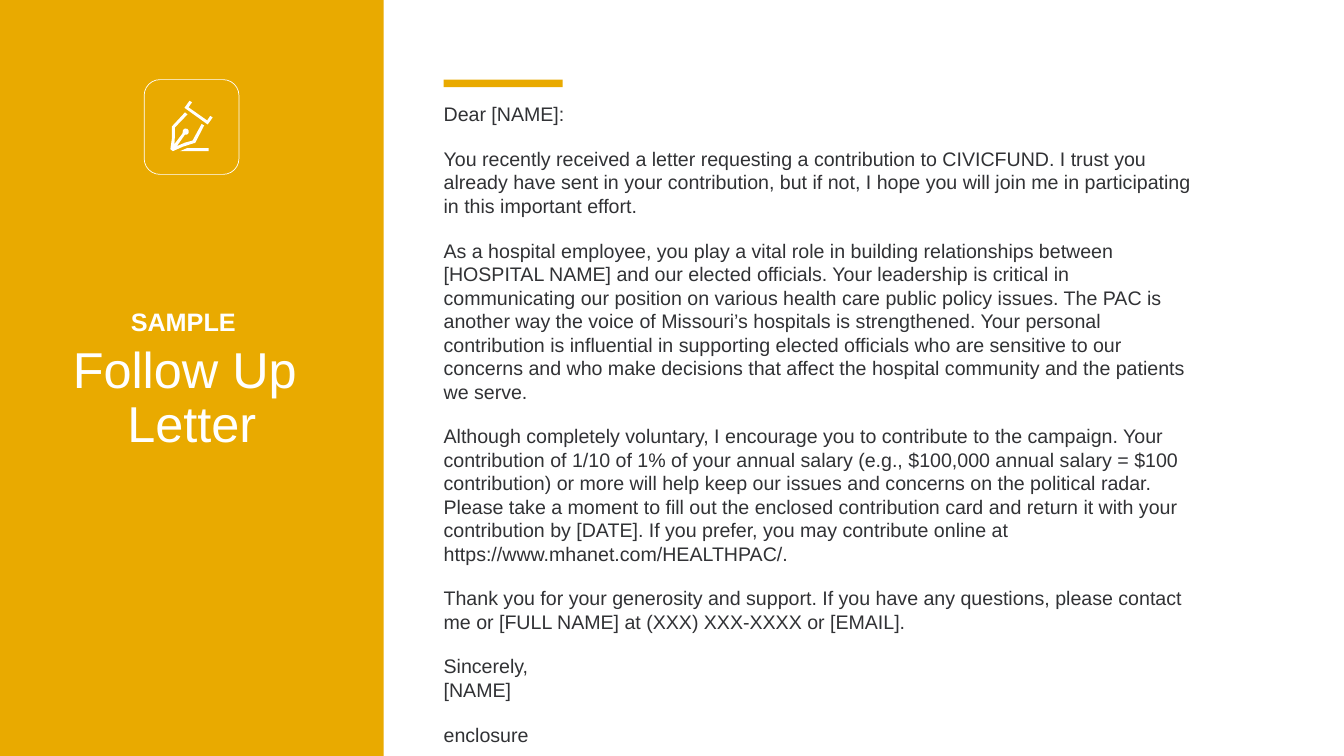
from typing import NamedTuple

from pptx import Presentation
from pptx import util as u
from pptx.dml.color import RGBColor
from pptx.enum import shapes, text

PX = 9144
FONT = "Arial"
GOLD = RGBColor(0xE9, 0xAA, 0x00)
WHITE = RGBColor(0xFF, 0xFF, 0xFF)
INK = RGBColor(0x31, 0x32, 0x35)


class Box(NamedTuple):
    x: int
    y: int
    w: int
    h: int


class Piece(NamedTuple):
    text: str
    size: int
    bold: bool
    breaks: bool


PANEL = Box(0, 0, 761, 1500)
ACCENT = Box(880, 158, 236, 15)
BADGE = Box(286, 158, 188, 188)
TITLE = Box(0, 547, 761, 407)
LETTER = Box(880, 203, 1482, 1187)

TITLE_PIECES = [
    Piece("SAMPLE", 36, True, False),
    Piece(" ", 88, True, True),
    Piece("Follow Up ", 72, False, True),
    Piece("Letter", 72, False, False),
]

PEN_ICON = [
    [(414, 294), (371, 294), (357, 300), (414, 300)],
    [(411, 239), (374, 213), (381, 203), (376, 200), (366, 214),
     (412, 247), (422, 233), (417, 230)],
    [(400, 246), (382, 279), (367, 283), (351, 290), (367, 267),
     (371, 267), (374, 264), (374, 259), (372, 256), (367, 255),
     (363, 258), (362, 265), (346, 286), (347, 270), (347, 253),
     (372, 227), (367, 223), (341, 251), (341, 275), (338, 296),
     (343, 300), (363, 291), (385, 284), (387, 284), (405, 249)],
]

LETTER_PARAGRAPHS = [
    "Dear [NAME]:",
    "You recently received a letter requesting a contribution to CIVICFUND. "
    "I trust you already have sent in your contribution, but if not, I hope "
    "you will join me in participating in this important effort.",
    "As a hospital employee, you play a vital role in building relationships "
    "between [HOSPITAL NAME] and our elected officials. Your leadership is "
    "critical in communicating our position on various health care public "
    "policy issues. The PAC is another way the voice of Missouri’s hospitals "
    "is strengthened. Your personal contribution is influential in supporting "
    "elected officials who are sensitive to our concerns and who make "
    "decisions that affect the hospital community and the patients we serve.",
    "Although completely voluntary, I encourage you to contribute to the "
    "campaign. Your contribution of 1/10 of 1% of your annual salary (e.g., "
    "$100,000 annual salary = $100 contribution) or more will help keep our "
    "issues and concerns on the political radar. Please take a moment to fill "
    "out the enclosed contribution card and return it with your contribution "
    "by [DATE]. If you prefer, you may contribute online at "
    "https://www.mhanet.com/HEALTHPAC/.",
    "Thank you for your generosity and support. If you have any questions, "
    "please contact me or [FULL NAME] at (XXX) XXX-XXXX or [EMAIL].",
    "Sincerely,\v[NAME]",
    "enclosure",
]


def emu(box: Box) -> list[int]:
    return [v * PX for v in box]


def paint(sp, fill: RGBColor, line: RGBColor | None = None) -> None:
    sp.shadow.inherit = False
    sp.fill.solid()
    sp.fill.fore_color.rgb = fill
    if line is None:
        sp.line.fill.background()
    else:
        sp.line.color.rgb = line
        sp.line.width = u.Pt(1)


def style(r, size: int, color: RGBColor, bold: bool = False) -> None:
    r.font.name = FONT
    r.font.size = u.Pt(size)
    r.font.bold = bold
    r.font.color.rgb = color


def add_rect(s, box: Box) -> None:
    paint(s.shapes.add_shape(shapes.MSO_SHAPE.RECTANGLE, *emu(box)), GOLD)


def add_badge(s) -> None:
    g = s.shapes.add_group_shape()
    sp = g.shapes.add_shape(shapes.MSO_SHAPE.ROUNDED_RECTANGLE, *emu(BADGE))
    paint(sp, GOLD, WHITE)
    for points in PEN_ICON:
        fb = g.shapes.build_freeform(*points[0], scale=PX)
        fb.add_line_segments(points[1:], close=True)
        paint(fb.convert_to_shape(), WHITE)


def add_title(s) -> None:
    tf = s.shapes.add_textbox(*emu(TITLE)).text_frame
    tf.word_wrap = True
    p = tf.paragraphs[0]
    p.alignment = text.PP_ALIGN.CENTER
    p.line_spacing = 0.9
    for piece in TITLE_PIECES:
        r = p.add_run()
        r.text = piece.text
        style(r, piece.size, WHITE, piece.bold)
        if piece.breaks:
            p.add_line_break()


def add_letter(s) -> None:
    tf = s.shapes.add_textbox(*emu(LETTER)).text_frame
    tf.word_wrap = True
    tf.margin_left = tf.margin_top = tf.margin_right = tf.margin_bottom = 0
    for i, words in enumerate(LETTER_PARAGRAPHS):
        p = tf.add_paragraph() if i else tf.paragraphs[0]
        p.text = words
        p.space_after = u.Pt(30)
        for r in p.runs:
            style(r, 28, INK)


def main() -> None:
    prs = Presentation()
    prs.slide_width, prs.slide_height = 2666 * PX, 1500 * PX
    s = prs.slides.add_slide(prs.slide_layouts[6])
    add_rect(s, PANEL)
    add_title(s)
    add_letter(s)
    add_rect(s, ACCENT)
    add_badge(s)
    prs.save("out.pptx")


if __name__ == "__main__":
    main()
